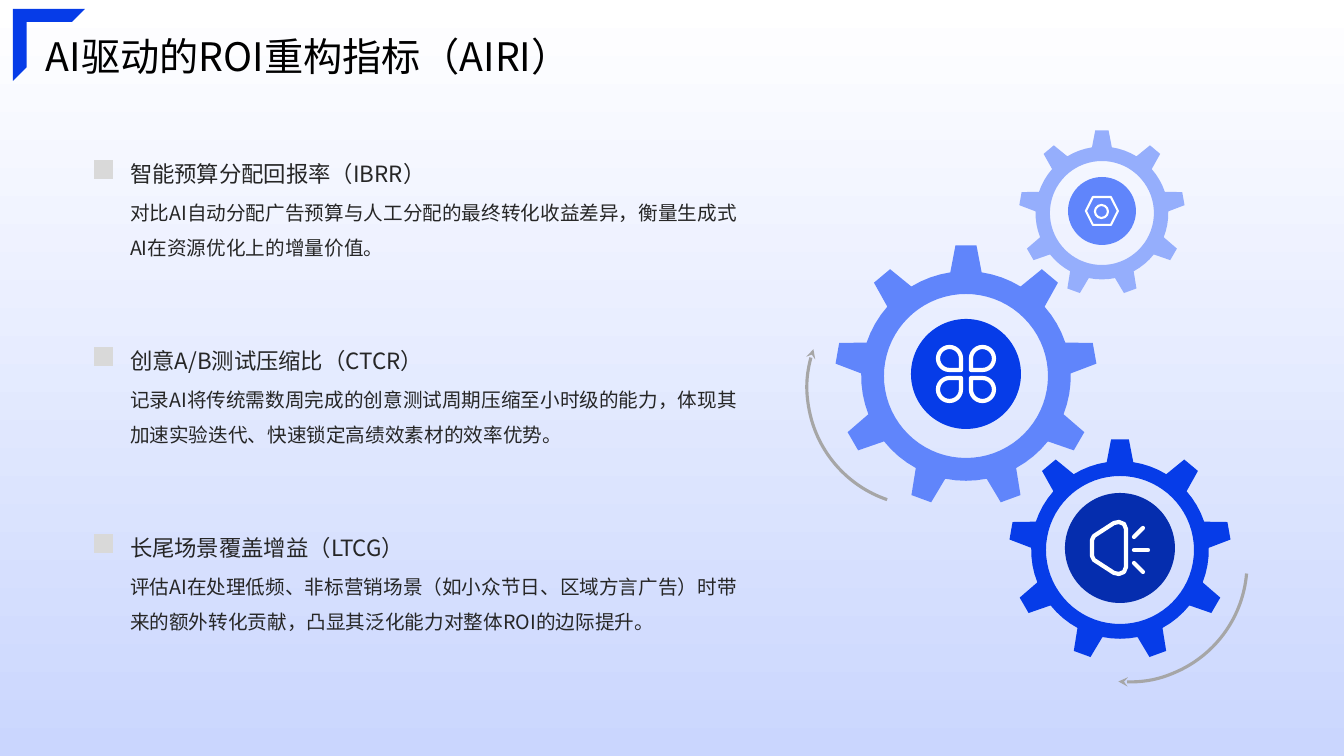
import math

import lxml.etree
import pptx
import pptx.dml.color
import pptx.enum.shapes
import pptx.enum.text
import pptx.oxml.ns
import pptx.util

PX = 914400 / 100.8
FONT = "Noto Sans CJK SC"
SHAPES = pptx.enum.shapes.MSO_SHAPE
ANCHORS = pptx.enum.text.MSO_ANCHOR
COLOURS = {
    "white": "FFFFFF", "sky": "CAD6FE", "black": "000000", "ink": "262626",
    "marker": "D9D9D9", "arrow": "A6A6A6", "pale": "95AEFC",
    "light": "6085FB", "blue": "063CE8", "navy": "052DAE",
}
METRICS = [
    ("智能预算分配回报率（IBRR）",
     "对比AI自动分配广告预算与人工分配的最终转化收益差异，衡量生成式AI在资源优化上的增量价值。"),
    ("创意A/B测试压缩比（CTCR）",
     "记录AI将传统需数周完成的创意测试周期压缩至小时级的能力，体现其加速实验迭代、快速锁定高绩效素材的效率优势。"),
    ("长尾场景覆盖增益（LTCG）",
     "评估AI在处理低频、非标营销场景（如小众节日、区域方言广告）时带来的额外转化贡献，凸显其泛化能力对整体ROI的边际提升。"),
]


def emu(pixels):
    return pptx.util.Emu(round(pixels * PX))


def colour(name):
    return pptx.dml.color.RGBColor.from_string(COLOURS[name])


def style_line(line, name, width):
    line.color.rgb = colour(name)
    line.width = pptx.util.Pt(width)


def style_shape(shape, fill=None, line=None, width=1):
    shape.shadow.inherit = False
    if fill:
        shape.fill.solid()
        shape.fill.fore_color.rgb = colour(fill)
    else:
        shape.fill.background()
    if line:
        style_line(shape.line, line, width)
    else:
        shape.line.fill.background()
    return shape


def add_preset(slide, preset, box, rotation=0, **style):
    shape = slide.shapes.add_shape(preset, *map(emu, box))
    shape.rotation = rotation
    return style_shape(shape, **style)


def add_outline(slide, contours, **style):
    first = contours[0]
    builder = slide.shapes.build_freeform(emu(first[0][0]), emu(first[0][1]), 1.0)
    for index, contour in enumerate(contours):
        points = [(emu(x), emu(y)) for x, y in contour]
        if index:
            builder.move_to(*points[0])
        builder.add_line_segments(points[1:], close=True)
    return style_shape(builder.convert_to_shape(), **style)


def add_text(slide, text, box, size, color="ink", anchor=ANCHORS.TOP, spacing=1.2):
    frame = slide.shapes.add_textbox(*map(emu, box)).text_frame
    frame.word_wrap = True
    frame.vertical_anchor = anchor
    frame.margin_left = frame.margin_right = frame.margin_top = frame.margin_bottom = 0
    paragraph = frame.paragraphs[0]
    paragraph.line_spacing = spacing
    run = paragraph.add_run()
    run.text = text
    run.font.size = pptx.util.Pt(size)
    run.font.color.rgb = colour(color)
    run.font.name = FONT
    properties = run.font._element
    lxml.etree.SubElement(properties, pptx.oxml.ns.qn("a:ea"), typeface=FONT)


def draw_background(slide, width, height):
    shape = add_preset(slide, SHAPES.RECTANGLE, (0, 0, width, height))
    shape.fill.gradient()
    shape.fill.gradient_angle = 270
    for stop, name, position in zip(shape.fill.gradient_stops, ("white", "sky"), (0, 1)):
        stop.color.rgb = colour(name)
        stop.position = position


def draw_title(slide, left, top):
    add_text(slide, "AI驱动的ROI重构指标（AIRI）", (left + 33, top + 18, 972, 49), 28,
             color="black", anchor=ANCHORS.MIDDLE)
    corner = add_preset(slide, SHAPES.HALF_FRAME, (left, top, 72, 72), fill="blue")
    corner.adjustments[0] = 0.18
    corner.adjustments[1] = 0.19


def draw_metric(slide, left, top, heading, description):
    add_text(slide, heading, (left + 36, top, 610, 34), 16, anchor=ANCHORS.BOTTOM)
    add_text(slide, description, (left + 36, top + 36, 610, 131), 14, spacing=1.5)
    add_preset(slide, SHAPES.RECTANGLE, (left, top + 7, 19, 19), fill="marker")


def draw_gear(slide, left, top, size, hole, hub, rim_colour, hub_colour, draw_icon):
    radius = size / 2
    center_x, center_y = left + radius, top + radius

    def at(distance, degrees):
        angle = math.radians(degrees)
        return center_x + distance * math.sin(angle), center_y - distance * math.cos(angle)

    rim = []
    for tooth in range(0, 360, 40):
        rim += [at(radius, tooth - 4.6), at(radius, tooth + 4.6)]
        rim += [at(radius * 0.8, tooth + 8.6 + 5.7 * step) for step in range(5)]
    opening = [at(hole, -5 * step) for step in range(72)]
    add_outline(slide, [rim, opening], fill=rim_colour)

    hub_y = center_y - 2
    add_preset(slide, SHAPES.OVAL, (center_x - hub / 2, hub_y - hub / 2, hub, hub),
               fill=hub_colour)
    draw_icon(slide, center_x, hub_y)


def draw_petals(slide, x, y):
    for offset_x, offset_y, rotation in ((-28, -27, 90), (5, -27, 180),
                                         (5, 4, 270), (-28, 4, 0)):
        add_preset(slide, SHAPES.TEAR, (x + offset_x, y + offset_y, 23, 23),
                   rotation=rotation, line="white", width=3)


def draw_nut(slide, x, y):
    add_preset(slide, SHAPES.HEXAGON, (x - 16, y - 14, 32, 28), line="white", width=1.5)
    add_preset(slide, SHAPES.OVAL, (x - 7, y - 6, 13, 13), line="white", width=1.5)


def draw_horn(slide, x, y):
    upper = [(-28, -8), (-26, -12), (-6, -25), (-1, -26), (4, -24), (6, -19)]
    lower = [(dx, -dy) for dx, dy in reversed(upper)]
    add_outline(slide, [[(x + dx, y + dy) for dx, dy in upper + lower]],
                line="white", width=3)
    for start_x, start_y, end_x, end_y in ((14, -11, 23, -20), (14, 2, 28, 2),
                                           (14, 15, 23, 24)):
        ray = slide.shapes.add_connector(
            pptx.enum.shapes.MSO_CONNECTOR.STRAIGHT,
            emu(x + start_x), emu(y + start_y), emu(x + end_x), emu(y + end_y))
        style_line(ray.line, "white", 3)
        ray.line._get_or_add_ln().set("cap", "rnd")
        lxml.etree.SubElement(ray._element.spPr, pptx.oxml.ns.qn("a:effectLst"))


def draw_turn_arrow(slide, left, top, rotation):
    arc = add_preset(slide, SHAPES.ARC, (left, top, 237, 237), rotation=rotation,
                     line="arrow", width=2.25)
    line = arc.line._get_or_add_ln()
    lxml.etree.SubElement(line, pptx.oxml.ns.qn("a:tailEnd"), type="stealth")


def main():
    presentation = pptx.Presentation()
    presentation.slide_width = emu(1344)
    presentation.slide_height = emu(756)
    slide = presentation.slides.add_slide(presentation.slide_layouts[6])
    draw_background(slide, 1344, 756)
    for index, (heading, description) in enumerate(METRICS):
        draw_metric(slide, 94, 153 + 187 * index, heading, description)
    draw_gear(slide, 835, 245, 262, 82, 110, "light", "blue", draw_petals)
    draw_gear(slide, 1009, 439, 222, 74, 110, "blue", "navy", draw_horn)
    draw_gear(slide, 1019, 130, 166, 52, 68, "pale", "light", draw_nut)
    draw_turn_arrow(slide, 807, 269, 198.9)
    draw_turn_arrow(slide, 1010, 445, 94.9)
    draw_title(slide, 13, 9)
    presentation.save("out.pptx")


if __name__ == "__main__":
    main()
